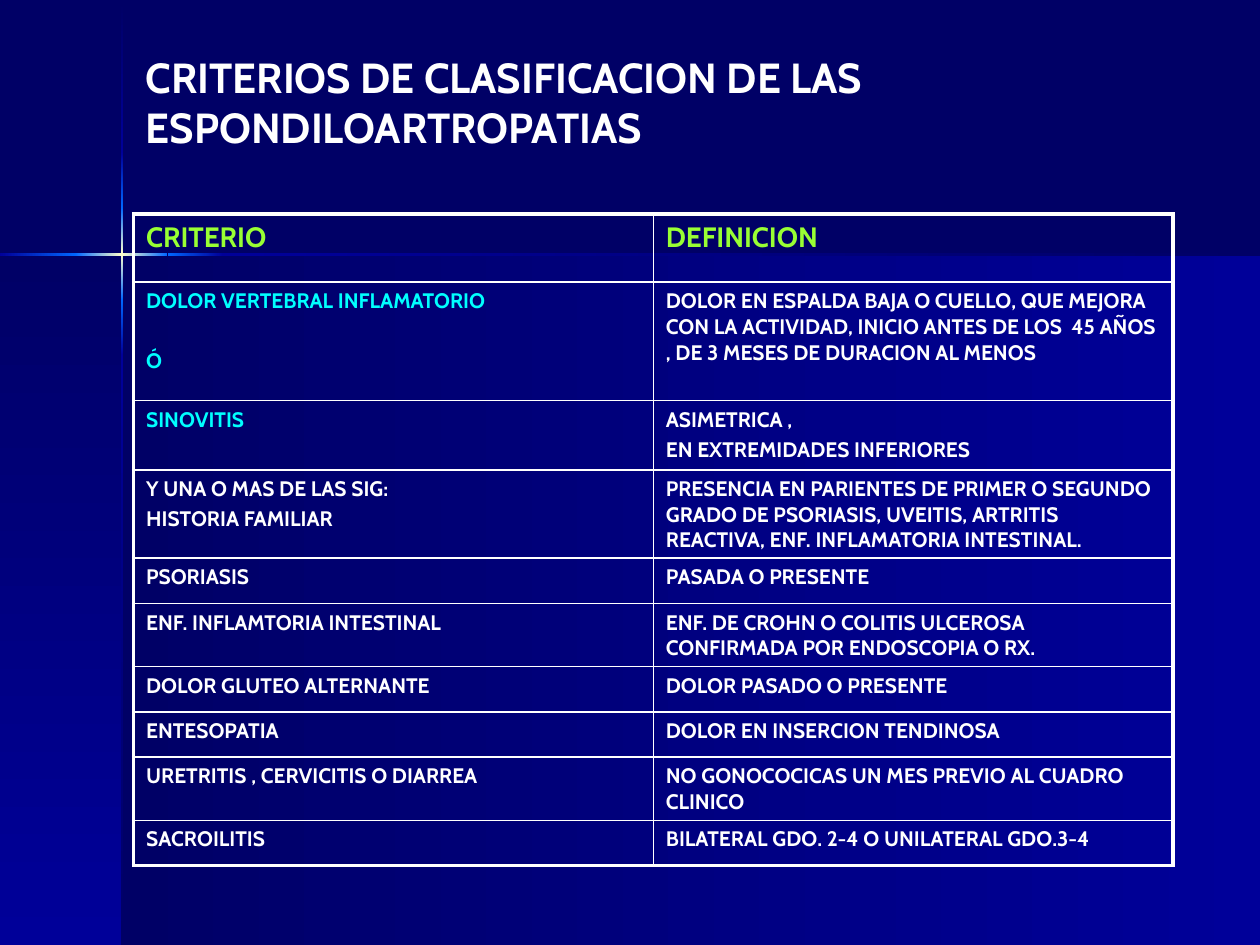
from copy import deepcopy
from dataclasses import dataclass

from lxml import etree
from pptx import Presentation
from pptx.dml.color import RGBColor
from pptx.enum.shapes import MSO_SHAPE
from pptx.oxml.ns import qn
from pptx.util import Inches, Pt

RECTANGLE = MSO_SHAPE.RECTANGLE


@dataclass(frozen=True)
class Theme:
    font: str = "Cabin"
    night: str = "000066"
    navy: str = "000099"
    blue: str = "0066FF"
    glow: str = "FFFFCC"
    white: str = "FFFFFF"
    green: str = "99FF33"
    cyan: str = "00FFFF"
    title_size: float = 24
    header_size: float = 16
    body_size: float = 12
    frame_line: float = 2.25
    grid_line: float = 1


theme = Theme()


def write(frame, lines, *, size, color, gap=0):
    """Fill a text frame, one paragraph a line, with gap points between them."""
    frame.word_wrap = True
    for index, line in enumerate(lines):
        para = frame.paragraphs[0] if index == 0 else frame.add_paragraph()
        para.space_before = Pt(gap if index else 0)
        span = para.add_run()
        span.text = line
        span.font.name = theme.font
        span.font.size = Pt(size)
        span.font.bold = True
        span.font.color.rgb = RGBColor.from_string(color)


def add_border(cell, side, width):
    """Draw one side (L, R, T or B) of a table cell."""
    properties = cell._tc.get_or_add_tcPr()
    line = etree.SubElement(properties, qn(f"a:ln{side}"), w=str(Pt(width)))
    fill = etree.SubElement(line, qn("a:solidFill"))
    etree.SubElement(fill, qn("a:srgbClr"), val=theme.white)


deck = Presentation()
deck.slide_width, deck.slide_height = Inches(10), Inches(7.5)
page = deck.slides.add_slide(deck.slide_layouts[6])
page.background.fill.solid()
page.background.fill.fore_color.rgb = RGBColor.from_string(theme.night)

# Background panels and the glowing cross: left, top, width, height, angle, colours
ACROSS, DOWN = 0, 270
darken = (theme.navy, theme.night)
brighten = (theme.night, theme.navy)
fade_in = (theme.navy, theme.blue)
fade_out = (theme.blue, theme.navy)
shine = (theme.blue, theme.glow, theme.blue)
bands = [
    (0.97, 2.02, 9.03, 5.48, ACROSS, brighten),
    (0, 2.02, 0.97, 5.48, DOWN, brighten),
    (0.96, 0.01, 0.02, 1.2, DOWN, brighten),
    (0.96, 2.82, 0.02, 4.68, DOWN, darken),
    (1.77, 2.01, 8.23, 0.02, ACROSS, darken),
    (0.96, 2.38, 0.02, 0.44, DOWN, fade_out),
    (0.96, 1.21, 0.02, 0.44, DOWN, fade_in),
    (0.96, 1.65, 0.02, 0.73, DOWN, shine),
    (0, 2.01, 0.61, 0.02, ACROSS, fade_in),
    (1.33, 2.01, 0.44, 0.02, ACROSS, fade_out),
    (0.6, 2.01, 0.73, 0.02, ACROSS, shine),
]
for left, top, width, height, angle, colors in bands:
    band = page.shapes.add_shape(
        RECTANGLE, Inches(left), Inches(top), Inches(width), Inches(height))
    band.shadow.inherit = False
    band.line.fill.background()
    band.fill.gradient()
    band.fill.gradient_angle = angle
    stop_list = band._element.spPr.find(qn("a:gradFill")).find(qn("a:gsLst"))
    while len(stop_list) < len(colors):
        stop_list.append(deepcopy(stop_list[0]))
    for index, (stop, color) in enumerate(zip(band.fill.gradient_stops, colors)):
        stop.position = index / (len(colors) - 1)
        stop.color.rgb = RGBColor.from_string(color)

# Title
title = page.shapes.add_textbox(Inches(1.06), Inches(0.36), Inches(8.35), Inches(0.9))
write(title.text_frame, ["CRITERIOS DE CLASIFICACION DE LAS ESPONDILOARTROPATIAS"],
      size=theme.title_size, color=theme.white)

# Criteria table: row height, criterion lines, definition lines
rows = [
    (0.54, ["CRITERIO"], ["DEFINICION"]),
    (0.94, ["DOLOR VERTEBRAL INFLAMATORIO", "Ó"],
     ["DOLOR EN ESPALDA BAJA O CUELLO, QUE MEJORA CON LA ACTIVIDAD, INICIO ANTES "
      "DE LOS  45 AÑOS , DE 3 MESES DE DURACION AL MENOS"]),
    (0.55, ["SINOVITIS"], ["ASIMETRICA ,", "EN EXTREMIDADES INFERIORES"]),
    (0.7, ["Y UNA O MAS DE LAS SIG:", "HISTORIA FAMILIAR"],
     ["PRESENCIA EN PARIENTES DE PRIMER O SEGUNDO GRADO DE PSORIASIS, UVEITIS, "
      "ARTRITIS REACTIVA, ENF. INFLAMATORIA INTESTINAL."]),
    (0.36, ["PSORIASIS"], ["PASADA O PRESENTE"]),
    (0.5, ["ENF. INFLAMTORIA INTESTINAL"],
     ["ENF. DE CROHN O COLITIS ULCEROSA CONFIRMADA POR ENDOSCOPIA O RX."]),
    (0.36, ["DOLOR GLUTEO ALTERNANTE"], ["DOLOR PASADO O PRESENTE"]),
    (0.36, ["ENTESOPATIA"], ["DOLOR EN INSERCION TENDINOSA"]),
    (0.5, ["URETRITIS , CERVICITIS O DIARREA"],
     ["NO GONOCOCICAS UN MES PREVIO AL CUADRO CLINICO"]),
    (0.36, ["SACROILITIS"], ["BILATERAL GDO. 2-4 O UNILATERAL GDO.3-4"]),
]
HEADER_ROW, PAIN_ROW, SYNOVITIS_ROW = 0, 1, 2
last_row = len(rows) - 1
total_height = sum(height for height, _, _ in rows)
table = page.shapes.add_table(len(rows), 2, Inches(1.06), Inches(1.7),
                              Inches(8.25), Inches(total_height)).table
table.first_row = table.horz_banding = False

for row, (height, *texts) in enumerate(rows):
    table.rows[row].height = Inches(height)
    for column, lines in enumerate(texts):
        cell = table.cell(row, column)
        on_frame = {"L": column == 0, "R": column == 1,
                    "T": row == HEADER_ROW, "B": row == last_row}
        for side, outer in on_frame.items():
            add_border(cell, side, theme.frame_line if outer else theme.grid_line)
        cell.fill.background()

        size, color, gap = theme.body_size, theme.white, 2.4
        if row == HEADER_ROW:
            size, color = theme.header_size, theme.green
        elif column == 0 and row in (PAIN_ROW, SYNOVITIS_ROW):
            color, gap = theme.cyan, 19.5
        write(cell.text_frame, lines, size=size, color=color, gap=gap)

deck.save("out.pptx")
